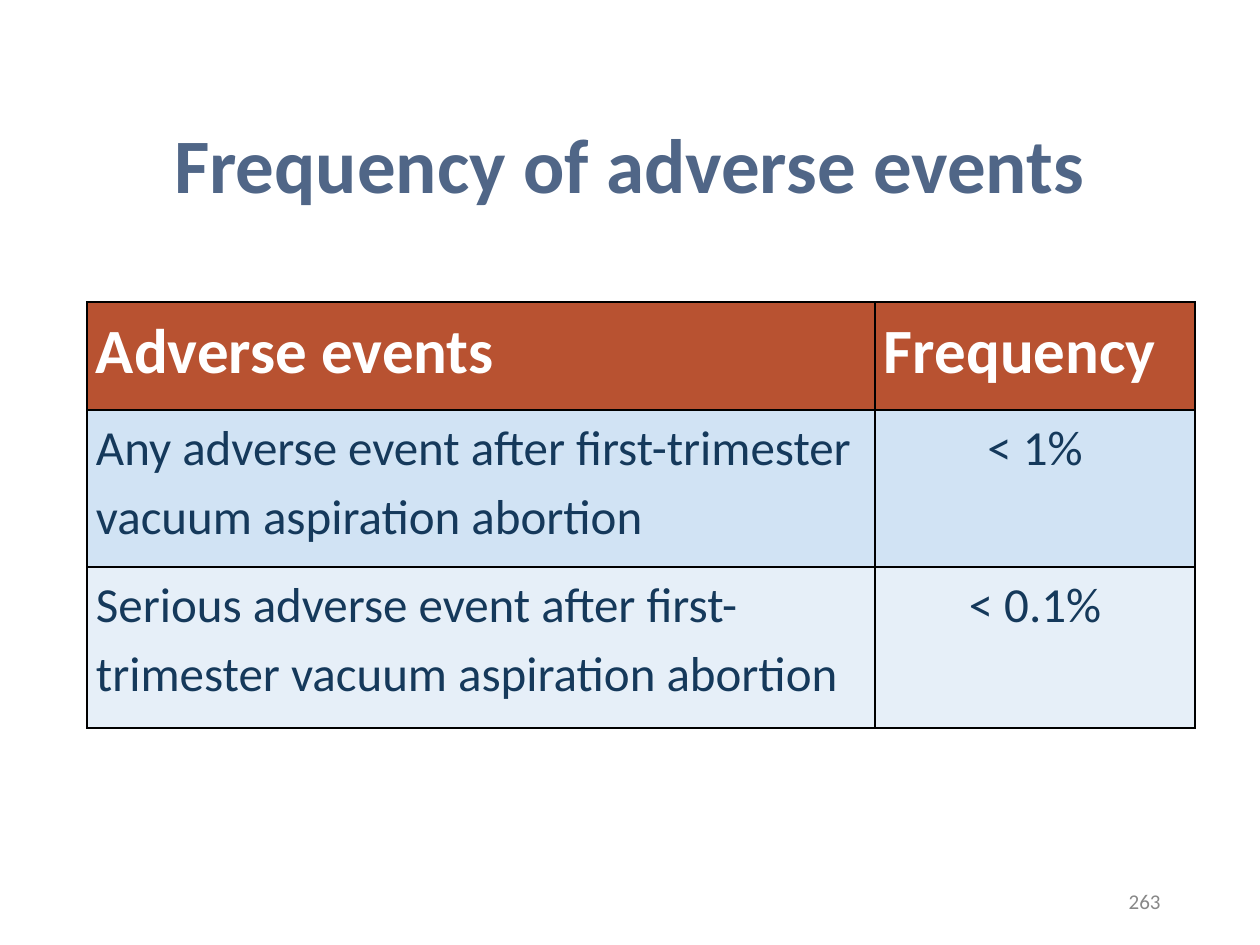
from lxml import etree
from pptx import Presentation
from pptx import util as u
from pptx.dml.color import RGBColor
from pptx.enum import text
from pptx.oxml.ns import qn

TITLE = "Frequency of adverse events"
PAGE_NUMBER = "263"
ROWS = [
    ("Adverse events", "Frequency"),
    ("Any adverse event after first-trimester vacuum aspiration abortion", "< 1%"),
    ("Serious adverse event after first-trimester vacuum aspiration abortion", "< 0.1%"),
]
ROW_FILLS = ["B85231", "D1E3F4", "E6EFF8"]
ROW_HEIGHTS = [108, 157, 161]
COLUMN_WIDTHS = [788, 320]
LEFT, CENTER, RIGHT = text.PP_ALIGN.LEFT, text.PP_ALIGN.CENTER, text.PP_ALIGN.RIGHT


def px(length):
    return u.Emu(length * 914400 // 126)


def color(value):
    return RGBColor.from_string(value)


def write(frame, wording, size, ink, align, bold=False, spacing=1.0):
    paragraph = frame.paragraphs[0]
    paragraph.alignment = align
    paragraph.line_spacing = spacing
    run = paragraph.add_run()
    run.text = wording
    run.font.name = "Calibri"
    run.font.size = u.Pt(size)
    run.font.bold = bold
    run.font.color.rgb = color(ink)


def add_label(slide, box, *wording_and_style, **style):
    frame = slide.shapes.add_textbox(*map(px, box)).text_frame
    frame.word_wrap = True
    frame.vertical_anchor = text.MSO_ANCHOR.MIDDLE
    write(frame, *wording_and_style, **style)


def add_borders(cell):
    """Put black 1 pt lines before the fill, as the schema orders them."""
    properties = cell._tc.get_or_add_tcPr()
    for position, side in enumerate(("lnL", "lnR", "lnT", "lnB")):
        line = etree.Element(qn(f"a:{side}"), w=str(u.Pt(1)))
        fill = etree.SubElement(line, qn("a:solidFill"))
        etree.SubElement(fill, qn("a:srgbClr"), val="000000")
        properties.insert(position, line)


def add_events_table(slide):
    table = slide.shapes.add_table(
        len(ROWS), len(COLUMN_WIDTHS), px(87), px(302),
        px(sum(COLUMN_WIDTHS)), px(sum(ROW_HEIGHTS))).table
    for column, width in zip(table.columns, COLUMN_WIDTHS):
        column.width = px(width)
    for r, (row, height) in enumerate(zip(table.rows, ROW_HEIGHTS)):
        row.height = px(height)
        header = r == 0
        for c, cell in enumerate(row.cells):
            cell.fill.solid()
            cell.fill.fore_color.rgb = color(ROW_FILLS[r])
            cell.margin_left = cell.margin_right = px(9)
            cell.margin_top = cell.margin_bottom = 0
            add_borders(cell)
            write(cell.text_frame, ROWS[r][c], 36 if header else 28,
                  "FFFFFF" if header else "15395B",
                  LEFT if header or c == 0 else CENTER,
                  bold=header, spacing=1.15)


def main():
    deck = Presentation()
    deck.slide_width, deck.slide_height = px(1260), px(945)
    slide = deck.slides.add_slide(deck.slide_layouts[6])
    add_label(slide, (87, 77, 1086, 183), TITLE, 44, "506687", CENTER,
              bold=True, spacing=0.9)
    add_events_table(slide)
    add_label(slide, (890, 876, 283, 50), PAGE_NUMBER, 12, "888888", RIGHT)
    deck.save("out.pptx")


if __name__ == "__main__":
    main()
